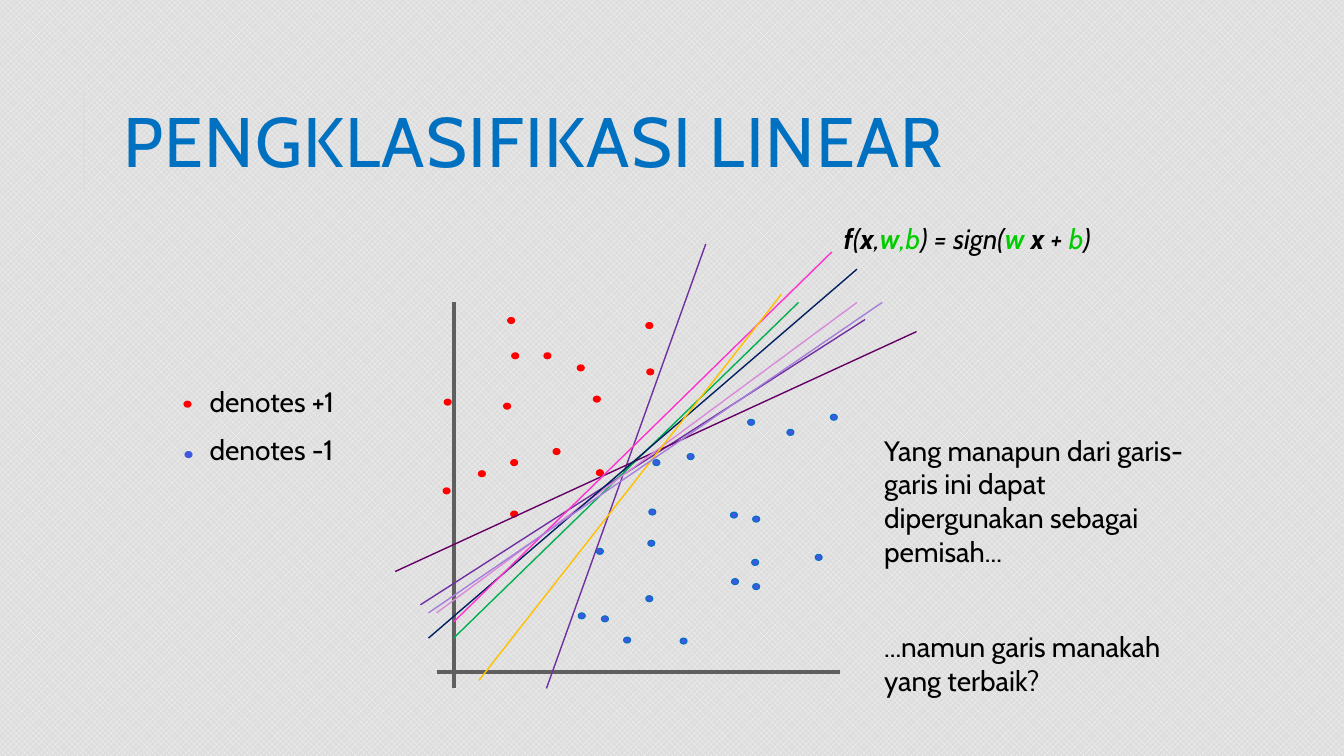
from pptx import Presentation
from pptx.dml.color import RGBColor
from pptx.enum import dml, shapes, text
from pptx.oxml.ns import qn
from pptx.util import Inches, Pt

FONT = "Cabin"
BLACK, GREEN, RED, BLUE, TITLE_BLUE = "000000", "00CC00", "FF0000", "3E59E1", "0070C0"
AXIS_GREY = "5F5F5F"
DOT_WIDTH, DOT_HEIGHT = 0.07, 0.06

# Centres of the data points
POSITIVE_POINTS = [
    (4.43, 4.87), (6.45, 3.69), (5.43, 3.53), (5.95, 4.69), (5.03, 4.03),
    (5.11, 3.53), (5.1, 4.59), (5.92, 3.96), (5.1, 5.1), (6.44, 3.23),
    (5.07, 3.18), (5.52, 4.48), (4.78, 4.7), (5.76, 3.65), (4.44, 3.99),
]
NEGATIVE_POINTS = [
    (5.77, 6.11), (6.51, 4.59), (7.28, 5.11), (5.95, 5.47), (8.27, 4.14),
    (7.49, 5.58), (6.85, 4.53), (8.12, 5.53), (6.22, 6.35), (7.5, 5.15),
    (6.47, 5.08), (7.84, 4.29), (7.45, 4.19), (7.29, 5.77), (6.78, 6.36),
    (6.44, 5.94), (6.46, 5.39), (6, 6.14), (7.5, 5.82),
]

# Candidate separators: start, end, colour
SEPARATORS = [
    ((5.42, 6.83), (7, 2.42), "7030A0"),
    ((4.17, 6), (8.58, 3.17), "7030A0"),
    ((4.5, 6.33), (7.92, 3), "00B050"),
    ((3.92, 5.67), (9.09, 3.29), "660066"),
    ((4.33, 6.08), (8.5, 3), "D98BD9"),
    ((4.25, 6.33), (8.5, 2.67), "002060"),
    ((4.5, 6.17), (8.25, 2.5), "FF33CC"),
    ((4.75, 6.75), (7.75, 2.92), "FFC000"),
    ((4.25, 6.08), (8.75, 3), "A67DDB"),
]

# Formula runs: text, colour, bold
FORMULA = [
    ("f", BLACK, True), ("(", BLACK, False), ("x", BLACK, True), (",", BLACK, False),
    ("w", GREEN, True), (",b", GREEN, False), (") = sign(", BLACK, False),
    ("w ", GREEN, True), ("x", BLACK, True), (" + ", BLACK, False),
    ("b", GREEN, False), (")", BLACK, False),
]


def rgb(value):
    return RGBColor.from_string(value)


def set_background(slide):
    fill = slide.background.fill
    fill.patterned()
    fill.pattern = dml.MSO_PATTERN.SOLID_DIAMOND
    fill.fore_color.rgb = rgb("F8F8F8")
    fill.back_color.rgb = rgb("DDDDDD")


def add_title(slide, wording):
    title = slide.shapes.title
    title.left, title.top = Inches(1.12), Inches(0.64)
    title.width, title.height = Inches(10.63), Inches(1.64)
    frame = title.text_frame
    frame.text = wording
    frame.word_wrap = True
    frame.auto_size = text.MSO_AUTO_SIZE.NONE
    frame.vertical_anchor = text.MSO_ANCHOR.MIDDLE
    paragraph = frame.paragraphs[0]
    paragraph.alignment = text.PP_ALIGN.LEFT
    paragraph.line_spacing = 0.8
    style_font(paragraph.font, 50, TITLE_BLUE)
    paragraph.runs[0].font._element.set("spc", "100")


def style_font(font, size, colour):
    font.name = FONT
    font.size = Pt(size)
    font.color.rgb = rgb(colour)


def add_text(slide, left, top, width, height, paragraphs, gap=0):
    box = slide.shapes.add_textbox(Inches(left), Inches(top), Inches(width), Inches(height))
    frame = box.text_frame
    frame.word_wrap = True
    frame.auto_size = text.MSO_AUTO_SIZE.SHAPE_TO_FIT_TEXT
    for index, wording in enumerate(paragraphs):
        paragraph = frame.add_paragraph() if index else frame.paragraphs[0]
        paragraph.text = wording
        if index:
            paragraph.space_before = Pt(gap)
        style_font(paragraph.font, 20, BLACK)


def add_formula(slide, left, top, width, height):
    box = slide.shapes.add_textbox(Inches(left), Inches(top), Inches(width), Inches(height))
    box.text_frame.word_wrap = True
    paragraph = box.text_frame.paragraphs[0]
    for wording, colour, bold in FORMULA:
        run = paragraph.add_run()
        run.text = wording
        style_font(run.font, 20, colour)
        run.font.bold = bold
        run.font.italic = True


def add_line(slide, start, end, colour, width):
    line = slide.shapes.add_connector(
        shapes.MSO_CONNECTOR.STRAIGHT, *(Inches(value) for value in start + end))
    line.line.color.rgb = rgb(colour)
    line.line.width = Pt(width)
    properties = line._element.spPr
    properties.append(properties.makeelement(qn("a:effectLst"), {}))


def add_dot(slide, centre, fill, outline):
    x, y = centre
    dot = slide.shapes.add_shape(
        shapes.MSO_SHAPE.OVAL, Inches(x - DOT_WIDTH / 2), Inches(y - DOT_HEIGHT / 2),
        Inches(DOT_WIDTH), Inches(DOT_HEIGHT))
    dot.shadow.inherit = False
    dot.fill.solid()
    dot.fill.fore_color.rgb = rgb(fill)
    dot.line.color.rgb = rgb(outline)
    dot.line.width = Pt(0.75)


def main():
    presentation = Presentation()
    presentation.slide_width, presentation.slide_height = Inches(13.33), Inches(7.5)
    slide = presentation.slides.add_slide(presentation.slide_layouts[5])
    set_background(slide)

    # Title with its side rule
    add_line(slide, (0.83, 1.9), (0.83, 0.9), "DDDDDD", 1.5)
    add_title(slide, "PENGKLASIFIKASI LINEAR")

    # Legend
    add_text(slide, 1.98, 3.77, 2.08, 0.93, ["denotes +1", "denotes -1"], gap=10)
    add_dot(slide, (1.86, 4.01), RED, RED)
    add_dot(slide, (1.87, 4.51), BLUE, BLUE)

    # Axes and data points
    add_line(slide, (4.5, 3), (4.5, 6.83), AXIS_GREY, 3)
    add_line(slide, (4.33, 6.67), (8.33, 6.67), AXIS_GREY, 3)
    for centre in POSITIVE_POINTS:
        add_dot(slide, centre, RED, RED)
    for centre in NEGATIVE_POINTS:
        add_dot(slide, centre, BLUE, TITLE_BLUE)

    # Separating lines
    for start, end, colour in SEPARATORS:
        add_line(slide, start, end, colour, 1)

    # Formula and remarks
    add_formula(slide, 8.27, 2.15, 3.5, 0.43)
    add_text(slide, 8.67, 4.25, 3.28, 2.79, [
        "Yang manapun dari garis-garis ini dapat dipergunakan sebagai pemisah...",
        "...namun garis manakah yang terbaik?",
    ], gap=44)

    presentation.save("out.pptx")


if __name__ == "__main__":
    main()
